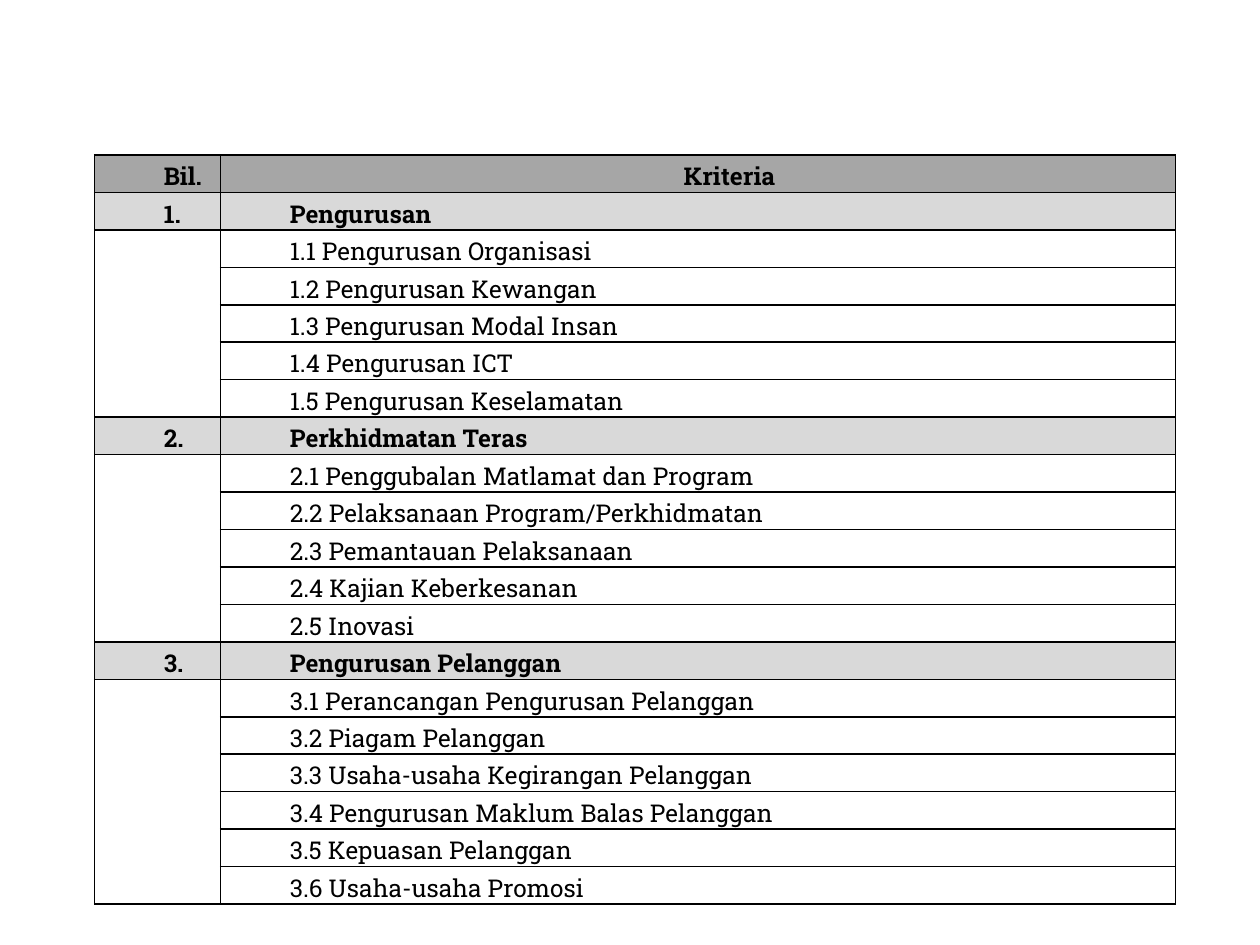
import dataclasses

import lxml.etree
import pptx
import pptx.dml.color
import pptx.enum.text
import pptx.oxml.ns
import pptx.table
import pptx.util

Inches = pptx.util.Inches
Align = pptx.enum.text.PP_ALIGN
RGBColor = pptx.dml.color.RGBColor

BLACK = RGBColor(0x00, 0x00, 0x00)
HEADER_GREY = RGBColor(0xA6, 0xA6, 0xA6)
SECTION_GREY = RGBColor(0xD9, 0xD9, 0xD9)

FONT = "Roboto Slab"
TEXT_SIZE = pptx.util.Pt(14)
BORDER_WIDTH = pptx.util.Pt(1)
ROW_HEIGHT = 0.27
COLUMN_WIDTHS = (1, 7.58)


@dataclasses.dataclass
class Section:
    title: str
    criteria: list[str]


SECTIONS = [
    Section("Pengurusan", [
        "Pengurusan Organisasi",
        "Pengurusan Kewangan",
        "Pengurusan Modal Insan",
        "Pengurusan ICT",
        "Pengurusan Keselamatan",
    ]),
    Section("Perkhidmatan Teras", [
        "Penggubalan Matlamat dan Program",
        "Pelaksanaan Program/Perkhidmatan",
        "Pemantauan Pelaksanaan",
        "Kajian Keberkesanan",
        "Inovasi",
    ]),
    Section("Pengurusan Pelanggan", [
        "Perancangan Pengurusan Pelanggan",
        "Piagam Pelanggan",
        "Usaha-usaha Kegirangan Pelanggan",
        "Pengurusan Maklum Balas Pelanggan",
        "Kepuasan Pelanggan",
        "Usaha-usaha Promosi",
    ]),
]


def add_child(parent, tag: str, **attributes: str):
    return lxml.etree.SubElement(parent, pptx.oxml.ns.qn(tag), attributes)


def format_cell(cell: pptx.table._Cell) -> None:
    """Set margins, borders and an empty fill."""
    cell.margin_left = cell.margin_right = Inches(0.05)
    cell.margin_top = cell.margin_bottom = 0
    properties = cell._tc.get_or_add_tcPr()
    for side in ("a:lnL", "a:lnR", "a:lnT", "a:lnB"):
        line = add_child(properties, side, w=str(BORDER_WIDTH))
        add_child(add_child(line, "a:solidFill"), "a:srgbClr", val=str(BLACK))
    cell.fill.background()
    # Keep the empty cells from stretching their rows
    add_child(cell.text_frame.paragraphs[0]._p, "a:endParaRPr",
              sz=str(int(TEXT_SIZE.pt * 100)))


def write_cell(cell: pptx.table._Cell, text: str, bold: bool = False,
               align: Align = Align.LEFT) -> None:
    para = cell.text_frame.paragraphs[0]
    para.alignment = align
    para.line_spacing = 1.15
    indent = para._p.get_or_add_pPr()
    indent.set("marL", str(Inches(0.5)))
    indent.set("indent", "0")
    span = para.add_run()
    span.text = text
    span.font.name = FONT
    span.font.size = TEXT_SIZE
    span.font.bold = bold
    span.font.color.rgb = BLACK


def write_heading(table: pptx.table.Table, row: int, number: str, title: str,
                  colour: RGBColor, title_align: Align = Align.LEFT) -> None:
    for column, (text, align) in enumerate(((number, Align.LEFT), (title, title_align))):
        cell = table.cell(row, column)
        cell.fill.solid()
        cell.fill.fore_color.rgb = colour
        write_cell(cell, text, True, align)


def write_section(table: pptx.table.Table, row: int, number: int, section: Section) -> int:
    """Write a section and return the row that follows it."""
    write_heading(table, row, f"{number}.", section.title, SECTION_GREY)
    last = row + len(section.criteria)
    table.cell(row + 1, 0).merge(table.cell(last, 0))
    for index, criterion in enumerate(section.criteria, start=1):
        write_cell(table.cell(row + index, 1), f"{number}.{index} {criterion}")
    return last + 1


def main() -> None:
    deck = pptx.Presentation()
    deck.slide_width, deck.slide_height = Inches(10), Inches(7.5)
    page = deck.slides.add_slide(deck.slide_layouts[6])

    # Table grid
    row_count = 1 + sum(1 + len(section.criteria) for section in SECTIONS)
    table = page.shapes.add_table(
        row_count, len(COLUMN_WIDTHS), Inches(0.75), Inches(1.23),
        Inches(sum(COLUMN_WIDTHS)), Inches(ROW_HEIGHT * row_count)).table
    table.first_row = table.horz_banding = False
    for column, width in zip(table.columns, COLUMN_WIDTHS):
        column.width = Inches(width)
    for table_row in table.rows:
        table_row.height = Inches(ROW_HEIGHT)
    for cell in table.iter_cells():
        format_cell(cell)

    # Header, then the numbered sections
    write_heading(table, 0, "Bil.", "Kriteria", HEADER_GREY, Align.CENTER)
    row = 1
    for number, section in enumerate(SECTIONS, start=1):
        row = write_section(table, row, number, section)

    deck.save("out.pptx")


if __name__ == "__main__":
    main()
